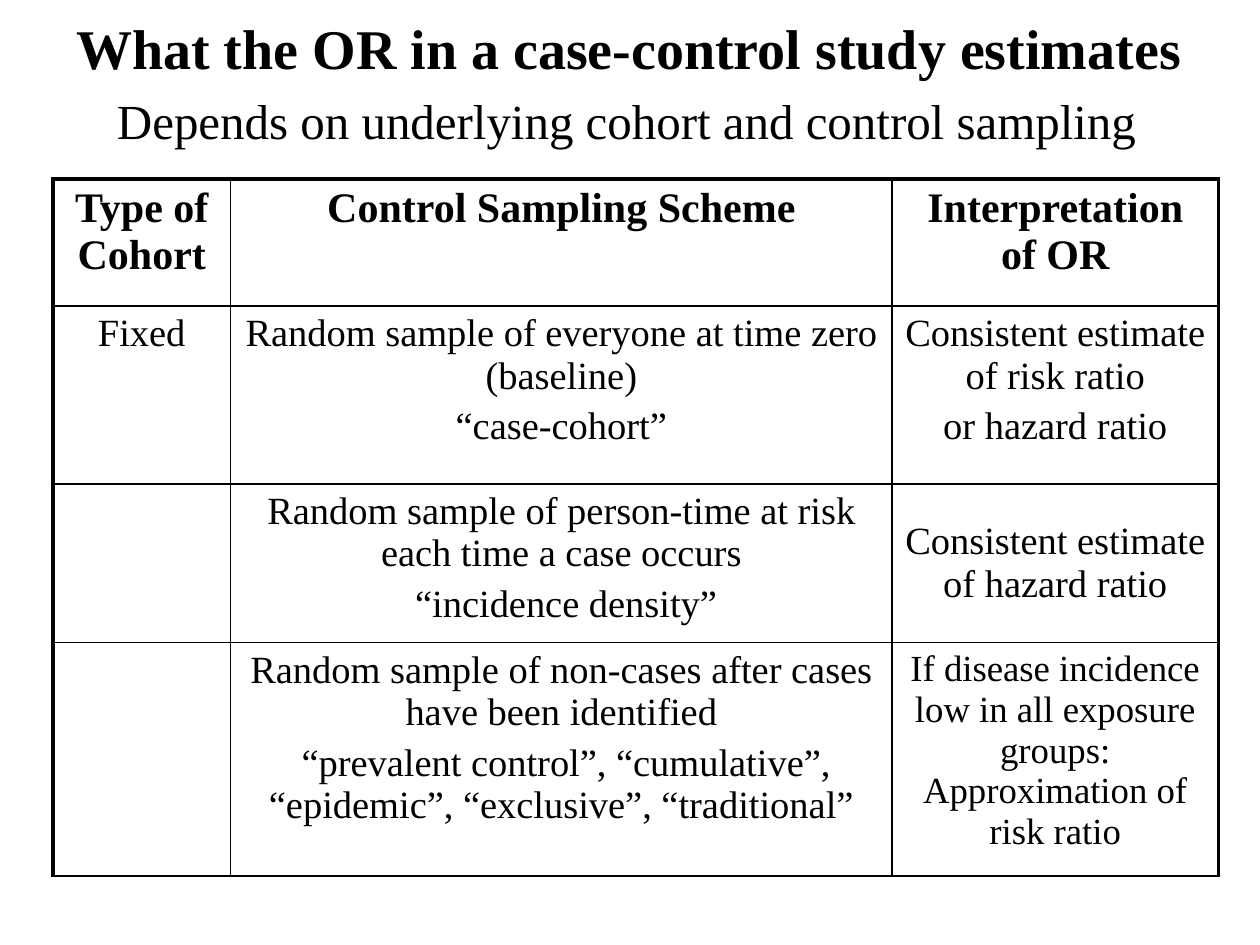
from dataclasses import dataclass

from lxml.etree import SubElement
from pptx import Presentation
from pptx.dml.color import RGBColor
from pptx.enum.text import MSO_ANCHOR, PP_ALIGN
from pptx.oxml.ns import qn
from pptx.util import Inches, Pt

FONT = "Times New Roman"
INK = "000000"
THIN, THICK = 1, 2.25


@dataclass
class Heading:
    text: str
    left: float
    top: float
    width: float
    height: float
    size: float
    bold: bool
    align: PP_ALIGN
    anchor: MSO_ANCHOR


@dataclass
class Entry:
    lines: tuple[str, ...] = ("",)
    size: float = 22
    bold: bool = False
    anchor: MSO_ANCHOR = MSO_ANCHOR.TOP


HEADINGS = [
    Heading("What the OR in a case-control study estimates",
            0.33, -0.25, 9.33, 1.25, 32, True, PP_ALIGN.CENTER, MSO_ANCHOR.MIDDLE),
    Heading("Depends on underlying cohort and control sampling",
            0.83, 0.67, 8.58, 0.58, 28, False, PP_ALIGN.LEFT, MSO_ANCHOR.TOP),
]

COLUMN_WIDTHS = [1.41, 5.25, 2.59]
ROW_HEIGHTS = [1.01, 1.41, 1.17, 1.72]
ROWS = [
    [Entry((title,), 24, True)
     for title in ("Type of Cohort", "Control Sampling Scheme", "Interpretation of OR")],
    [Entry(("Fixed",)),
     Entry(("Random sample of everyone at time zero (baseline)", "“case-cohort”")),
     Entry(("Consistent estimate of risk ratio", "or hazard ratio"))],
    [Entry(),
     Entry(("Random sample of person-time at risk each time a case occurs",
            " “incidence density”")),
     Entry(("Consistent estimate of hazard ratio",), anchor=MSO_ANCHOR.MIDDLE)],
    [Entry(),
     Entry(("Random sample of non-cases after cases have been identified",
            " “prevalent control”, “cumulative”, “epidemic”, “exclusive”, “traditional”")),
     Entry(("If disease incidence low in all exposure groups: Approximation of risk ratio",),
           21)],
]


def color(value: str) -> RGBColor:
    return RGBColor.from_string(value)


def write(tf, lines: tuple[str, ...], size: float, bold: bool, align: PP_ALIGN) -> None:
    tf.word_wrap = True
    for i, line in enumerate(lines):
        p = tf.paragraphs[0] if i == 0 else tf.add_paragraph()
        p.text = line
        p.alignment = align
        p.space_before = Pt(0.2 * size)
        p.font.name = FONT
        p.font.size = Pt(size)
        p.font.bold = bold
        p.font.color.rgb = color(INK)


def add_heading(s, heading: Heading) -> None:
    box = s.shapes.add_textbox(Inches(heading.left), Inches(heading.top),
                               Inches(heading.width), Inches(heading.height))
    tf = box.text_frame
    tf.vertical_anchor = heading.anchor
    write(tf, (heading.text,), heading.size, heading.bold, heading.align)


def set_borders(cell, widths: dict[str, float]) -> None:
    tcPr = cell._tc.get_or_add_tcPr()
    for side, width in widths.items():
        ln = SubElement(tcPr, qn(f"a:{side}"), w=str(Pt(width)))
        fill = SubElement(ln, qn("a:solidFill"))
        SubElement(fill, qn("a:srgbClr"), val=INK)


def add_grid(s) -> None:
    frame = s.shapes.add_table(len(ROWS), len(COLUMN_WIDTHS), Inches(0.42), Inches(1.42),
                               Inches(sum(COLUMN_WIDTHS)), Inches(sum(ROW_HEIGHTS)))
    table = frame.table
    table.first_row = False
    table.horz_banding = False
    for column, width in zip(table.columns, COLUMN_WIDTHS):
        column.width = Inches(width)
    for row, height in zip(table.rows, ROW_HEIGHTS):
        row.height = Inches(height)
    last_column = len(COLUMN_WIDTHS) - 1
    for r, entries in enumerate(ROWS):
        for c, entry in enumerate(entries):
            cell = table.cell(r, c)
            cell.vertical_anchor = entry.anchor
            write(cell.text_frame, entry.lines, entry.size, entry.bold, PP_ALIGN.CENTER)
            set_borders(cell, {
                "lnL": THICK if c == 0 else THIN,
                "lnR": THICK if c == last_column else THIN,
                "lnT": THICK if r == 0 else THIN,
                "lnB": THIN,
            })
            cell.fill.background()


def main() -> None:
    prs = Presentation()
    prs.slide_width = Inches(10)
    prs.slide_height = Inches(7.5)
    s = prs.slides.add_slide(prs.slide_layouts[6])
    for heading in HEADINGS:
        add_heading(s, heading)
    add_grid(s)
    prs.save("out.pptx")


if __name__ == "__main__":
    main()
